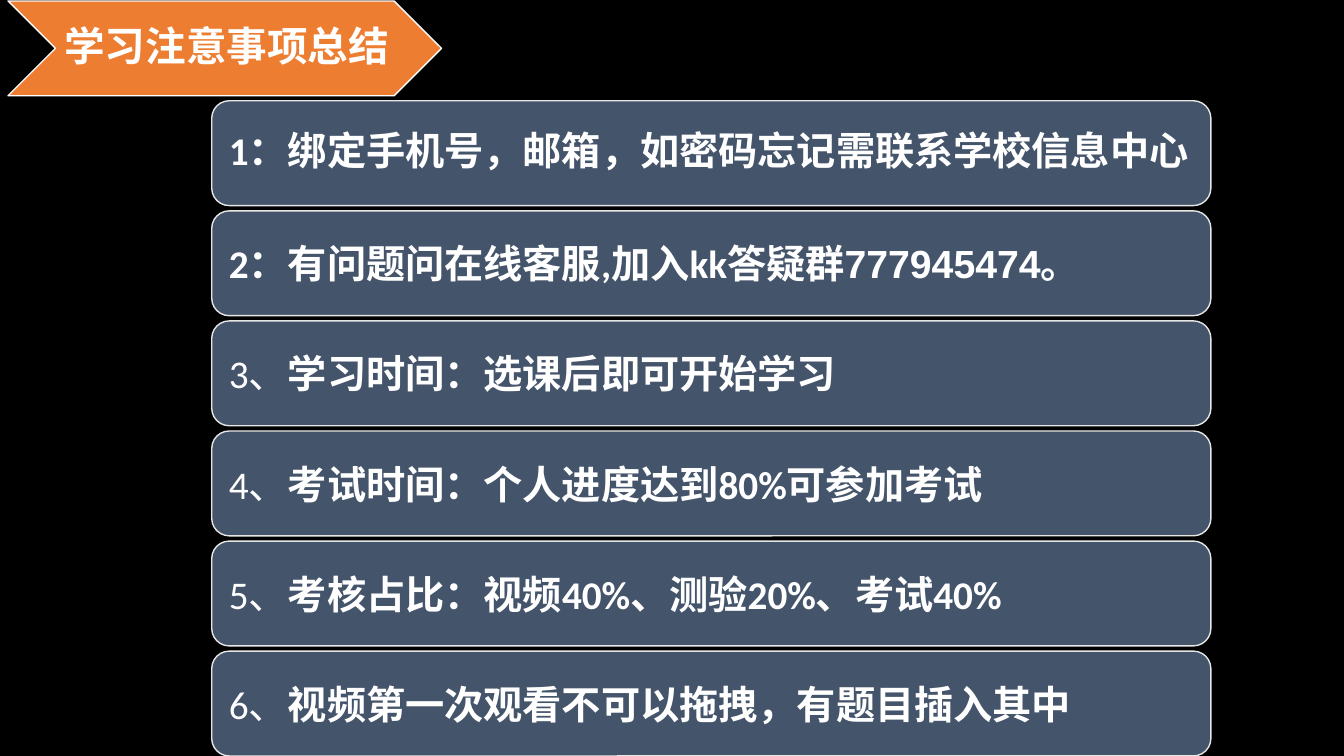
from dataclasses import dataclass

from pptx import Presentation
from pptx import util as u
from pptx.dml.color import RGBColor
from pptx.enum import shapes, text


@dataclass(frozen=True)
class Theme:
    """Colours, fonts and type sizes of the slide."""
    background: str = "000000"
    banner: str = "ED7D31"
    card: str = "44546A"
    card_line: str = "E7E6E6"
    white: str = "FFFFFF"
    font: str = "Calibri"
    number_font: str = "Arial"
    title_size: int = 29
    card_size: int = 28


SLIDE_WIDTH, SLIDE_HEIGHT = 13.33, 7.5
BANNER_BOX = (0.08, 0.01, 4.3, 0.94)
TITLE_BOX = (0.55, 0.01, 3.36, 0.94)
CARD_LEFT, CARD_TOP, CARD_WIDTH, CARD_HEIGHT = 2.1, 1, 9.91, 1.04

BOLD = {"bold": True}
PLAIN = {"bold": False}
NUMBER = {"bold": True, "name": Theme.number_font}
TITLE = "学习注意事项总结"
NOTES = [
    (0.9, [("1：绑定手机号，邮箱，如密码忘记需联系学校信息中心", BOLD)]),
    (1.0, [("2：有问题问在线客服,加入kk答疑群", BOLD), ("777945474", NUMBER), ("。", BOLD)]),
    (1.0, [("3、", PLAIN), ("学习时间：选课后即可开始学习", BOLD)]),
    (1.0, [("4、", PLAIN), ("考试时间：个人进度达到80%可参加考试", BOLD)]),
    (1.0, [("5、", PLAIN), ("考核占比：视频40%、测验20%、考试40%", BOLD)]),
    (1.0, [("6、", PLAIN), ("视频第一次观看不可以拖拽，有题目插入其中", BOLD)]),
]


def apply_format(target, values):
    """Set each attribute named in values on the target."""
    for name, value in values.items():
        setattr(target, name, value)


class SlideBuilder:
    """Adds styled elements to one slide."""

    def __init__(self, slide, theme):
        """Keep the slide and theme and paint the background."""
        self.slide = slide
        self.theme = theme
        fill = slide.background.fill
        fill.solid()
        fill.fore_color.rgb = RGBColor.from_string(theme.background)

    def add_panel(self, kind, box, fill, line):
        """Add a filled, outlined preset shape."""
        shape = self.slide.shapes.add_shape(kind, *map(u.Inches, box))
        shape.shadow.inherit = False
        shape.fill.solid()
        shape.fill.fore_color.rgb = RGBColor.from_string(fill)
        shape.line.color.rgb = RGBColor.from_string(line)
        shape.line.width = u.Pt(1)
        return shape

    def set_text(self, shape, runs, size, insets, alignment, line_spacing):
        """Fill a shape with one paragraph of formatted runs."""
        left, top, right, bottom = map(u.Inches, insets)
        apply_format(shape.text_frame, {
            "word_wrap": True,
            "auto_size": text.MSO_AUTO_SIZE.NONE,
            "vertical_anchor": text.MSO_ANCHOR.MIDDLE,
            "margin_left": left,
            "margin_top": top,
            "margin_right": right,
            "margin_bottom": bottom,
        })
        paragraph = shape.text_frame.paragraphs[0]
        apply_format(paragraph, {"alignment": alignment, "line_spacing": line_spacing})
        for wording, values in runs:
            run = paragraph.add_run()
            run.text = wording
            apply_format(run.font, {"name": self.theme.font, "size": u.Pt(size), **values})
            run.font.color.rgb = RGBColor.from_string(self.theme.white)

    def add_title(self, wording):
        """Place the title placeholder on a chevron banner."""
        theme = self.theme
        banner = self.add_panel(shapes.MSO_SHAPE.CHEVRON, BANNER_BOX, theme.banner, theme.white)
        title = self.slide.shapes.title
        banner.element.addnext(title.element)
        apply_format(title, dict(zip(("left", "top", "width", "height"),
                                     map(u.Inches, TITLE_BOX))))
        self.set_text(title, [(wording, BOLD)], theme.title_size,
                      (0.04, 0.02, 0, 0.02), text.PP_ALIGN.CENTER, 0.9)

    def add_card(self, top, runs, line_spacing):
        """Add one rounded card with its note."""
        theme = self.theme
        card = self.add_panel(shapes.MSO_SHAPE.ROUNDED_RECTANGLE,
                              (CARD_LEFT, top, CARD_WIDTH, CARD_HEIGHT),
                              theme.card, theme.card_line)
        self.set_text(card, runs, theme.card_size, (0.12, 0.06, 0.12, 0.06),
                      text.PP_ALIGN.LEFT, line_spacing)


def main():
    """Build and save the presentation."""
    presentation = Presentation()
    presentation.slide_width = u.Inches(SLIDE_WIDTH)
    presentation.slide_height = u.Inches(SLIDE_HEIGHT)
    slide = presentation.slides.add_slide(presentation.slide_layouts.get_by_name("Title Only"))
    builder = SlideBuilder(slide, Theme())
    builder.add_title(TITLE)
    pitch = (SLIDE_HEIGHT - CARD_HEIGHT - CARD_TOP) / (len(NOTES) - 1)
    for index, (line_spacing, runs) in enumerate(NOTES):
        builder.add_card(CARD_TOP + index * pitch, runs, line_spacing)
    presentation.save("out.pptx")


if __name__ == "__main__":
    main()
